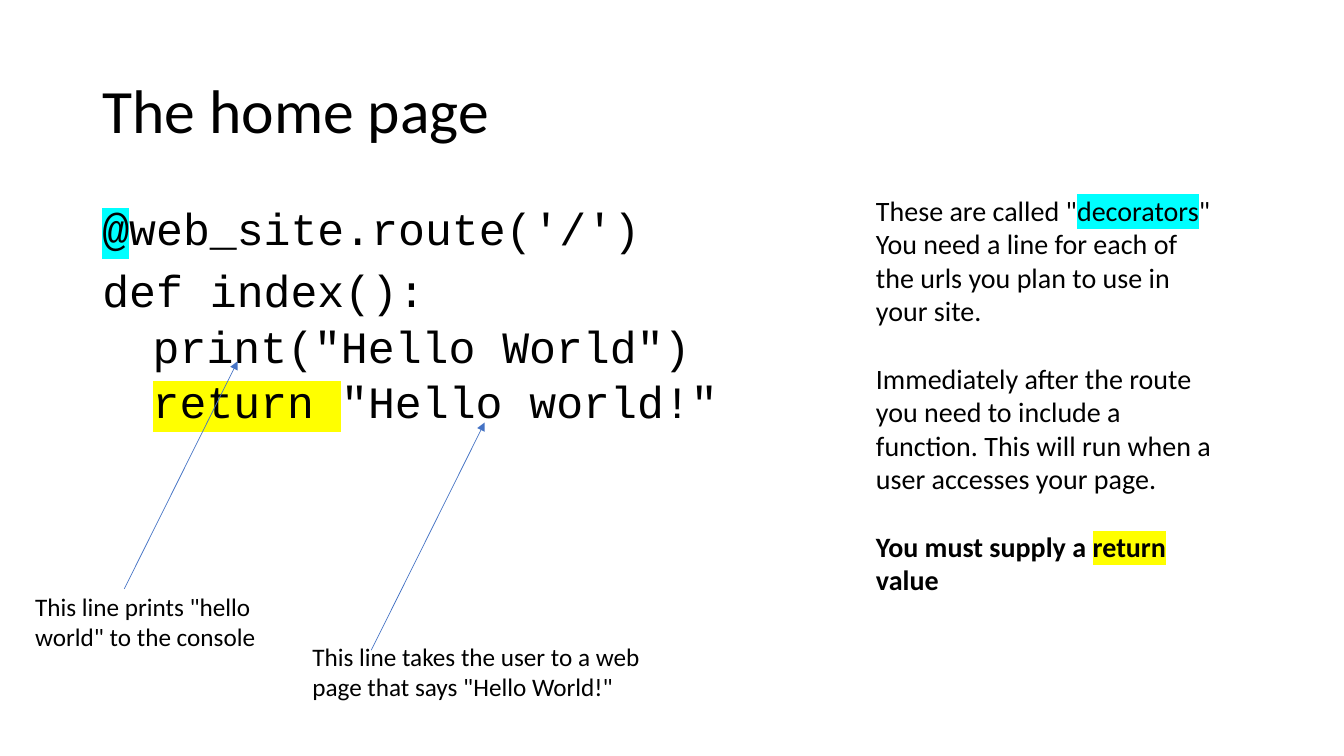
from dataclasses import dataclass, field
from typing import Any

from lxml import etree
from pptx import Presentation
from pptx.dml.color import RGBColor
from pptx.enum.shapes import MSO_CONNECTOR
from pptx.enum.text import MSO_ANCHOR, MSO_AUTO_SIZE
from pptx.oxml.ns import qn
from pptx.slide import Slide
from pptx.util import Emu, Inches, Pt

STRAIGHT = MSO_CONNECTOR.STRAIGHT
TOP, MIDDLE = MSO_ANCHOR.TOP, MSO_ANCHOR.MIDDLE
FIXED, GROW = MSO_AUTO_SIZE.NONE, MSO_AUTO_SIZE.SHAPE_TO_FIT_TEXT
COLUMNS, ROWS = 160, 90
SLIDE_WIDTH, SLIDE_HEIGHT = Inches(13.33), Inches(7.5)


@dataclass(frozen=True)
class Theme:
    ink: str = "000000"
    arrow: str = "4472C4"
    decorator_mark: str = "00FFFF"
    return_mark: str = "FFFF00"
    prose_font: str = "Calibri"
    code_font: str = "Courier New"
    title_size: int = 44
    code_size: int = 32
    aside_size: int = 20
    note_size: int = 18
    arrow_width: float = 0.5


THEME = Theme()


@dataclass(frozen=True)
class Span:
    words: str
    mark: str = ""
    bold: bool = False


@dataclass(frozen=True)
class Line:
    spans: list[Span]
    spacing: dict[str, Any] = field(default_factory=dict)
    margin: float = 0
    hanging: float = 0


@dataclass(frozen=True)
class Passage:
    column: float
    row: float
    columns: float
    rows: float
    size: int
    lines: list[Line]
    font: str = THEME.prose_font
    anchor: MSO_ANCHOR = TOP
    fit: MSO_AUTO_SIZE = GROW


@dataclass(frozen=True)
class Pointer:
    column: float
    row: float
    run: float = 13.5
    rise: float = 27.1


def across(columns: float) -> Emu:
    return Emu(round(SLIDE_WIDTH * columns / COLUMNS))


def down(rows: float) -> Emu:
    return Emu(round(SLIDE_HEIGHT * rows / ROWS))


def apply(target: Any, values: dict[str, Any]) -> None:
    for attribute, value in values.items():
        setattr(target, attribute, value)


def code_line(level: int, *spans: Span) -> Line:
    spacing = {"level": level, "line_spacing": 0.9, "space_before": Pt(5 if level else 10)}
    return Line(list(spans), spacing, margin=0.25 + 0.5 * level, hanging=0.25)


def draw_span(paragraph: Any, span: Span, passage: Passage) -> None:
    run = paragraph.add_run()
    run.text = span.words
    run.font.color.rgb = RGBColor.from_string(THEME.ink)
    if span.mark:
        highlight = etree.SubElement(run._r.get_or_add_rPr(), qn("a:highlight"))
        etree.SubElement(highlight, qn("a:srgbClr"), val=span.mark)
    apply(run.font, {"name": passage.font, "size": Pt(passage.size), "bold": span.bold})


def draw_passage(slide: Slide, passage: Passage) -> None:
    frame = slide.shapes.add_textbox(
        across(passage.column), down(passage.row),
        across(passage.columns), down(passage.rows),
    ).text_frame
    apply(frame, {"word_wrap": True, "auto_size": passage.fit,
                  "vertical_anchor": passage.anchor})
    for index, line in enumerate(passage.lines):
        paragraph = frame.add_paragraph() if index else frame.paragraphs[0]
        apply(paragraph, line.spacing)
        properties = paragraph._p.get_or_add_pPr()
        properties.set("marL", str(Inches(line.margin)))
        properties.set("indent", str(-Inches(line.hanging)))
        for span in line.spans:
            draw_span(paragraph, span, passage)


def draw_pointer(slide: Slide, pointer: Pointer) -> None:
    arrow = slide.shapes.add_connector(
        STRAIGHT, across(pointer.column), down(pointer.row),
        across(pointer.column + pointer.run), down(pointer.row - pointer.rise),
    )
    arrow.line.color.rgb = RGBColor.from_string(THEME.arrow)
    arrow.line.width = Pt(THEME.arrow_width)
    etree.SubElement(arrow.line._get_or_add_ln(), qn("a:tailEnd"), type="triangle")
    etree.SubElement(arrow._element.spPr, qn("a:effectLst"))


SECTION_GAP = {"space_before": Pt(24)}

TITLE = Passage(11, 4.8, 138, 17.4, THEME.title_size,
                [Line([Span("The home page")], {"line_spacing": 0.9})],
                anchor=MIDDLE, fit=FIXED)

CODE = Passage(11, 24, 138, 57.1, THEME.code_size, [
    code_line(0, Span("@", THEME.decorator_mark), Span("web_site.route('/')")),
    code_line(0, Span("def index():")),
    code_line(1, Span('print("Hello World")')),
    code_line(1, Span("return ", THEME.return_mark), Span('"Hello world!"')),
], font=THEME.code_font, fit=FIXED)

ASIDE = Passage(103.1, 22.4, 43.3, 53.3, THEME.aside_size, [
    Line([Span('These are called "'), Span("decorators", THEME.decorator_mark), Span('"')]),
    Line([Span("You need a line for each of the urls you plan to use in your site.")]),
    Line([Span("Immediately after the route you need to include a function. "
               "This will run when a user accesses your page.")], SECTION_GAP),
    Line([Span("You must supply a ", bold=True),
          Span("return ", THEME.return_mark, bold=True),
          Span("value", bold=True)], SECTION_GAP),
])

PRINT_NOTE = Passage(3, 69.8, 36, 8.5, THEME.note_size, [
    Line([Span('This line prints "hello world" to the console')]),
])

RETURN_NOTE = Passage(36, 75.7, 45.7, 8.5, THEME.note_size, [
    Line([Span('This line takes the user to a web page that says "Hello World!"')]),
])

PRINT_POINTER = Pointer(14.8, 70.1)
RETURN_POINTER = Pointer(44.2, 77.4)


def main() -> None:
    deck = Presentation()
    apply(deck, {"slide_width": SLIDE_WIDTH, "slide_height": SLIDE_HEIGHT})
    slide = deck.slides.add_slide(deck.slide_layouts[6])
    for passage in (TITLE, CODE, ASIDE, PRINT_NOTE, RETURN_NOTE):
        draw_passage(slide, passage)
    for pointer in (PRINT_POINTER, RETURN_POINTER):
        draw_pointer(slide, pointer)
    deck.save("out.pptx")


if __name__ == "__main__":
    main()
